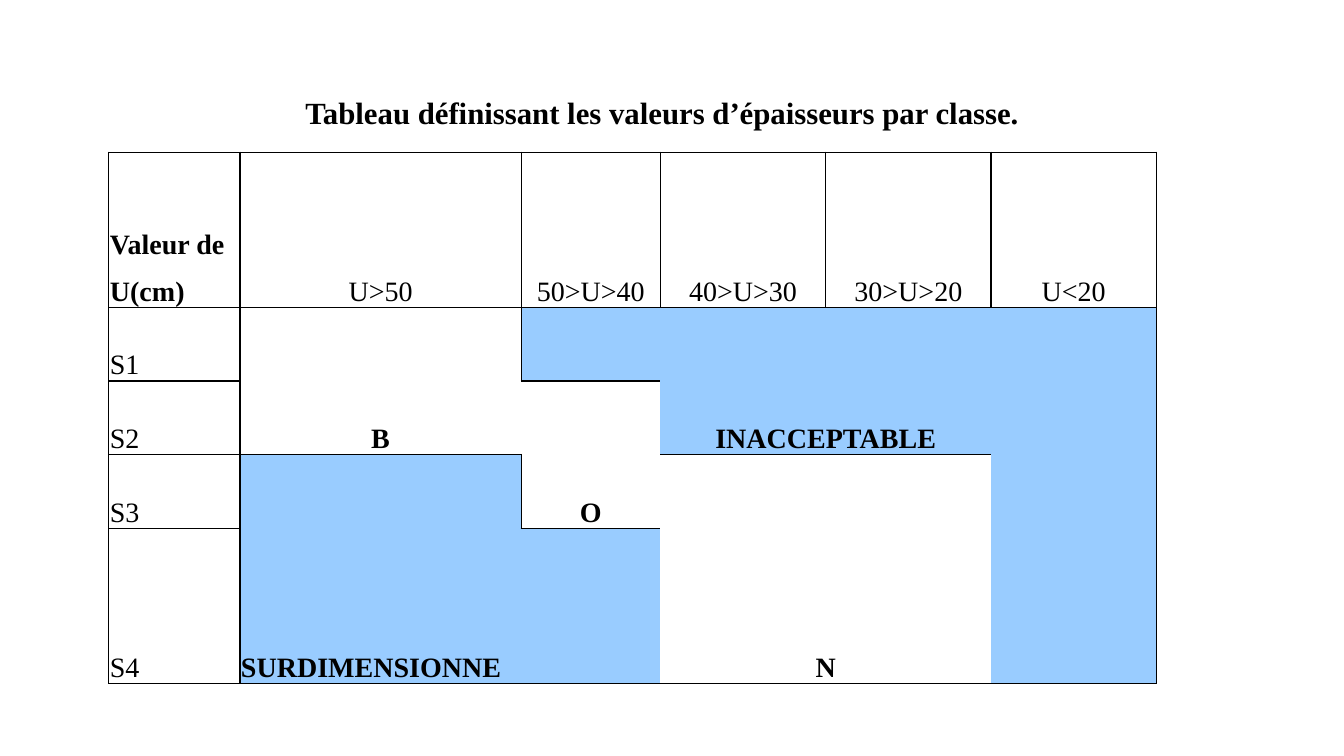
from lxml.etree import SubElement
from pptx import Presentation
from pptx.dml.color import RGBColor
from pptx.enum.text import MSO_ANCHOR, PP_ALIGN
from pptx.oxml.ns import qn
from pptx.util import Inches, Pt

BLUE, WHITE, BLACK = "99CCFF", "FFFFFF", "000000"
COLUMN_WIDTHS = [1.3, 2.79, 1.38, 1.64, 1.64, 1.64]
ROW_HEIGHTS = [1.54, 0.73, 0.73, 0.73, 1.54]
HEADINGS = ["Valeur de U(cm)", "U>50", "50>U>40", "40>U>30", "30>U>20", "U<20"]
CLASSES = ["S1", "S2", "S3", "S4"]

# Zones: row, column, rows spanned, columns spanned, text, fill, ruled sides
ZONES = [
    (1, 1, 2, 1, "B", WHITE, "LTB"),
    (1, 2, 1, 1, "", BLUE, "LTB"),
    (1, 3, 2, 2, "INACCEPTABLE", BLUE, "TB"),
    (1, 5, 4, 1, "", BLUE, "TRB"),
    (2, 2, 1, 1, "", WHITE, "T"),
    (3, 1, 1, 1, "", BLUE, "LTR"),
    (3, 2, 1, 1, "O", WHITE, "LB"),
    (3, 3, 2, 2, "N", WHITE, "TB"),
    (4, 1, 1, 1, "SURDIMENSIONNE", BLUE, "LB"),
    (4, 2, 1, 1, "", BLUE, "TB"),
]


def color(value):
    return RGBColor.from_string(value)


class SlideBuilder:
    font_name = "Times New Roman"
    line_spacing = 1.5

    def __init__(self, slide):
        self.slide = slide

    def set_text(self, paragraph, text, size, bold, align=PP_ALIGN.LEFT):
        paragraph.text = text
        paragraph.alignment = align
        paragraph.line_spacing = self.line_spacing
        font = paragraph.font
        font.name, font.size, font.bold = self.font_name, Pt(size), bold
        font.color.rgb = color(BLACK)

    def title(self, text, left, top, width, height):
        box = self.slide.shapes.add_textbox(
            Inches(left), Inches(top), Inches(width), Inches(height))
        box.text_frame.word_wrap = True
        self.set_text(box.text_frame.paragraphs[0], text, 22, True)

    def table(self, left, top, widths, heights):
        frame = self.slide.shapes.add_table(
            len(heights), len(widths), Inches(left), Inches(top),
            Inches(sum(widths)), Inches(sum(heights)))
        table = frame.table
        table.first_row = table.horz_banding = False
        for column, width in zip(table.columns, widths):
            column.width = Inches(width)
        for row, height in zip(table.rows, heights):
            row.height = Inches(height)
        return table

    def borders(self, cell, sides):
        """Rule the sides named by their initials and clear the others."""
        properties = cell._tc.get_or_add_tcPr()
        for index, side in enumerate("LRTB"):
            line = SubElement(properties, qn(f"a:ln{side}"), w=str(Pt(1)))
            if side in sides:
                fill = SubElement(line, qn("a:solidFill"))
                SubElement(fill, qn("a:srgbClr"), val=BLACK)
            else:
                SubElement(line, qn("a:noFill"))
            properties.insert(index, line)

    def cell(self, cell, text, fill=WHITE, sides="LTRB", bold=False,
             align=PP_ALIGN.CENTER):
        cell.margin_left = cell.margin_top = cell.margin_right = Inches(0.01)
        cell.margin_bottom = 0
        cell.vertical_anchor = MSO_ANCHOR.BOTTOM
        self.set_text(cell.text_frame.paragraphs[0], text, 20, bold, align)
        cell.fill.solid()
        cell.fill.fore_color.rgb = color(fill)
        self.borders(cell, sides)


def main():
    presentation = Presentation()
    presentation.slide_width = Inches(13.33)
    presentation.slide_height = Inches(7.5)
    slide = presentation.slides.add_slide(presentation.slide_layouts[6])
    builder = SlideBuilder(slide)

    builder.title("Tableau définissant les valeurs d’épaisseurs par classe.",
                  2.93, 0.7, 7.48, 0.59)
    table = builder.table(1.08, 1.51, COLUMN_WIDTHS, ROW_HEIGHTS)

    for column, heading in enumerate(HEADINGS):
        first = column == 0
        builder.cell(table.cell(0, column), heading, bold=first,
                     align=PP_ALIGN.LEFT if first else PP_ALIGN.CENTER)
    for row, name in enumerate(CLASSES, start=1):
        builder.cell(table.cell(row, 0), name, align=PP_ALIGN.LEFT)

    for row, column, row_span, column_span, text, fill, sides in ZONES:
        last_row, last_column = row + row_span - 1, column + column_span - 1
        for r in range(row, last_row + 1):
            for c in range(column, last_column + 1):
                edges = {"L": c == column, "T": r == row,
                         "R": c == last_column, "B": r == last_row}
                origin = (r, c) == (row, column)
                ruled = [side for side in sides if origin or edges[side]]
                builder.cell(table.cell(r, c), text if origin else "", fill,
                             ruled, bold=True)
        if row_span * column_span > 1:
            table.cell(row, column).merge(table.cell(last_row, last_column))
    table.cell(4, 1).text_frame.paragraphs[0].alignment = PP_ALIGN.LEFT

    presentation.save("out.pptx")


if __name__ == "__main__":
    main()
